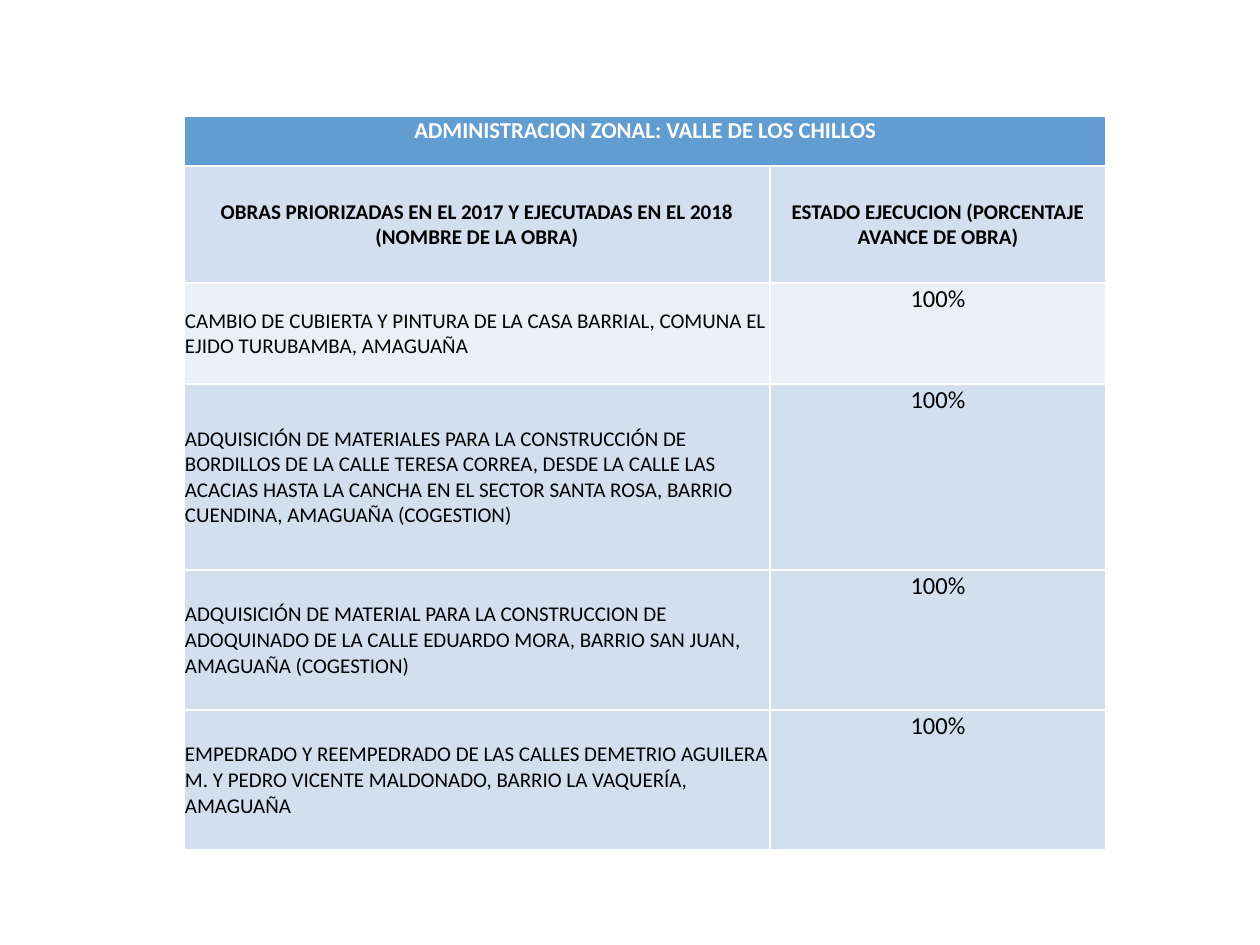
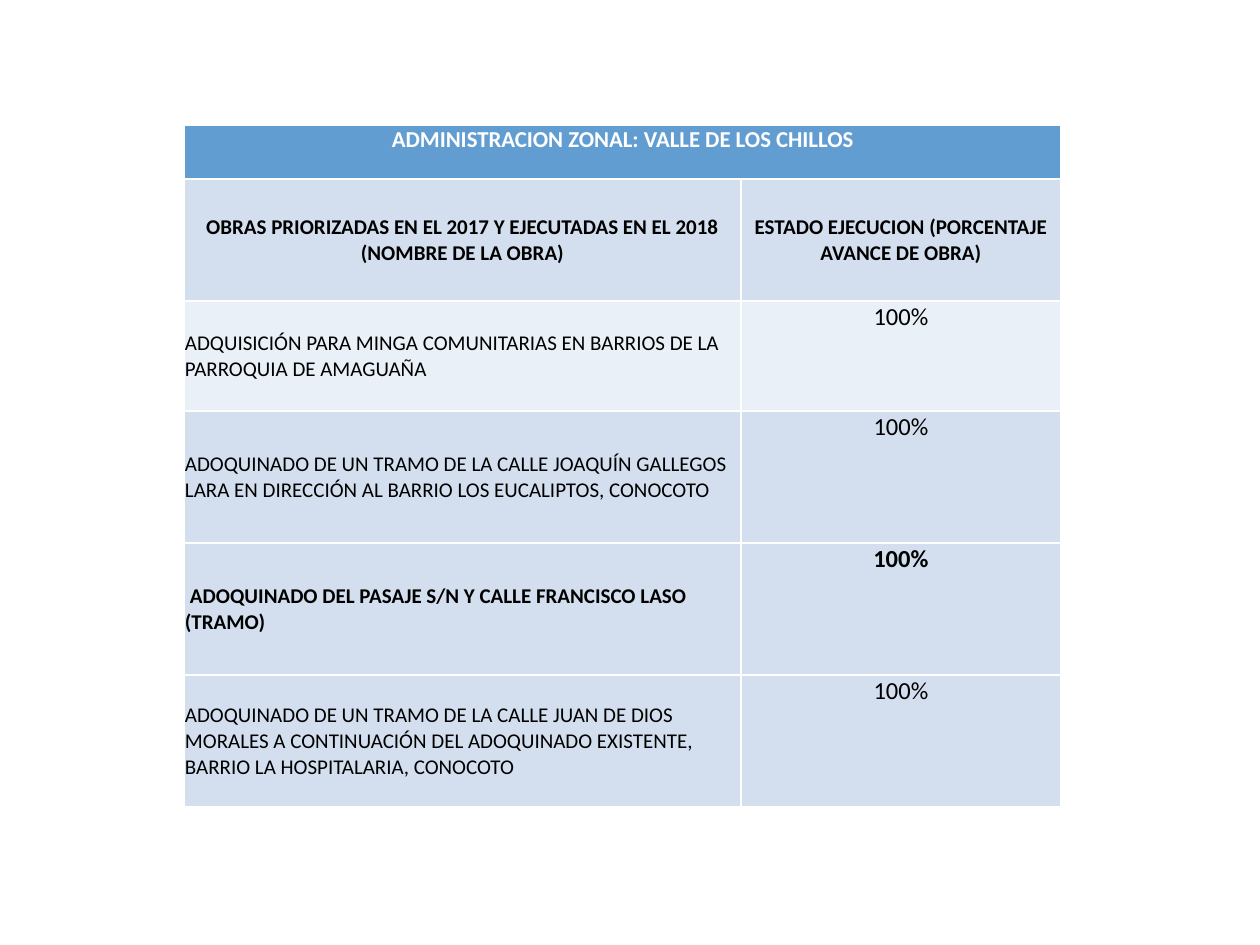
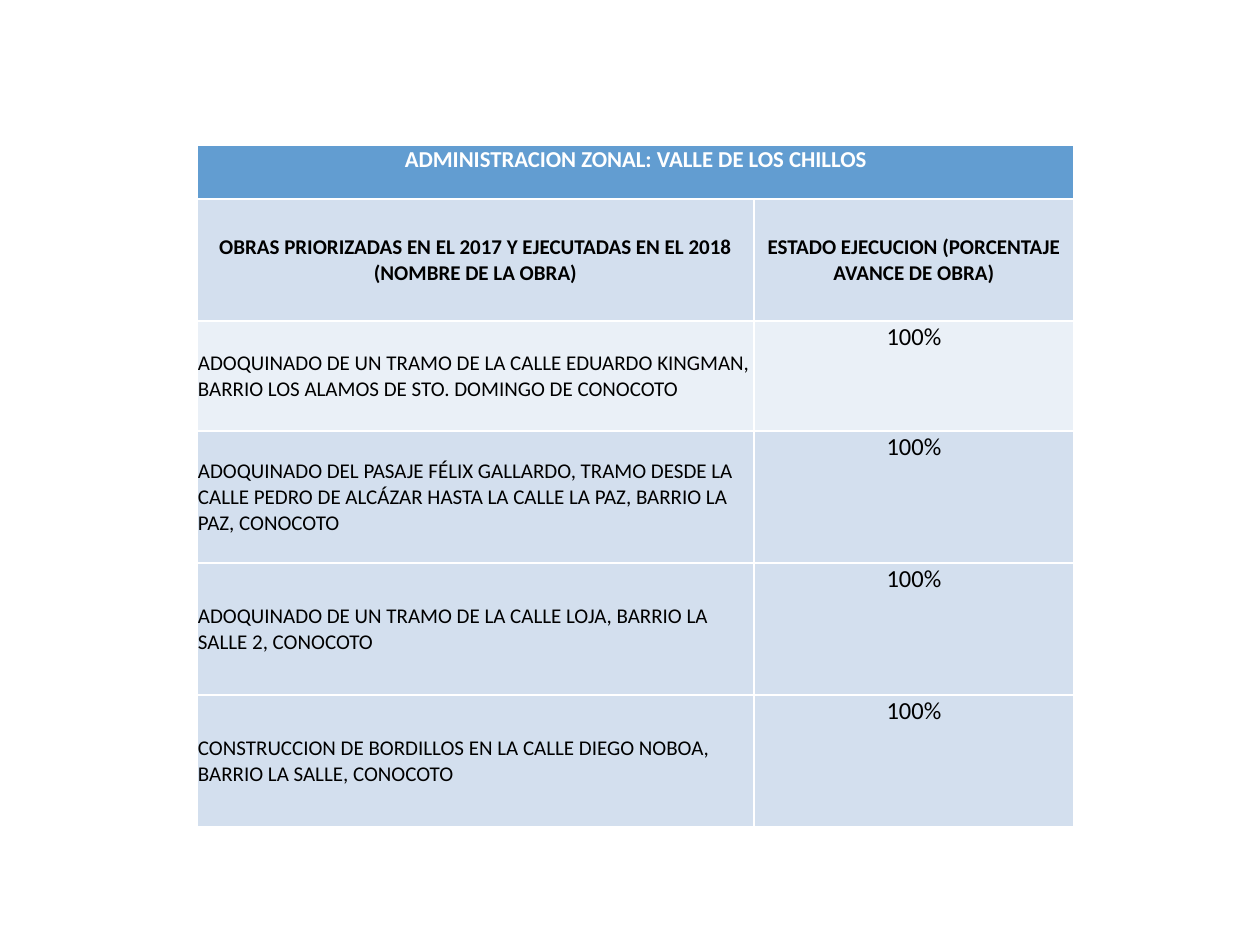
from dataclasses import dataclass

from lxml import etree
from pptx import Presentation
from pptx import util as u
from pptx.dml.color import RGBColor
from pptx.enum import text
from pptx.oxml.ns import qn

# Content: works of each slide as (name, progress, bold)
TITLE = "ADMINISTRACION ZONAL: VALLE DE LOS CHILLOS"
HEADINGS = (
    "OBRAS PRIORIZADAS EN EL 2017 Y EJECUTADAS EN EL 2018 (NOMBRE DE LA OBRA)",
    "ESTADO EJECUCION (PORCENTAJE AVANCE DE OBRA)",
)
AMAGUANA_WORKS = [
    ("CAMBIO DE CUBIERTA Y PINTURA DE LA CASA BARRIAL, COMUNA EL EJIDO TURUBAMBA, "
     "AMAGUAÑA", "100%", False),
    ("ADQUISICIÓN DE MATERIALES PARA LA CONSTRUCCIÓN DE BORDILLOS DE LA CALLE TERESA "
     "CORREA, DESDE LA CALLE LAS ACACIAS HASTA LA CANCHA EN EL SECTOR SANTA ROSA, "
     "BARRIO CUENDINA, AMAGUAÑA (COGESTION)", "100%", False),
    ("ADQUISICIÓN DE MATERIAL PARA LA CONSTRUCCION DE ADOQUINADO DE LA CALLE EDUARDO "
     "MORA, BARRIO SAN JUAN, AMAGUAÑA (COGESTION)", "100%", False),
    ("EMPEDRADO Y REEMPEDRADO DE LAS CALLES DEMETRIO AGUILERA M. Y PEDRO VICENTE "
     "MALDONADO, BARRIO LA VAQUERÍA, AMAGUAÑA", "100%", False),
]
MIXED_WORKS = [
    ("ADQUISICIÓN PARA MINGA COMUNITARIAS EN BARRIOS DE LA PARROQUIA DE AMAGUAÑA",
     "100%", False),
    ("ADOQUINADO DE UN TRAMO DE LA CALLE JOAQUÍN GALLEGOS LARA EN DIRECCIÓN AL BARRIO "
     "LOS EUCALIPTOS, CONOCOTO", "100%", False),
    ("ADOQUINADO DEL PASAJE S/N Y CALLE FRANCISCO LASO (TRAMO)", "100%", True),
    ("ADOQUINADO DE UN TRAMO DE LA CALLE JUAN DE DIOS MORALES A CONTINUACIÓN DEL "
     "ADOQUINADO EXISTENTE, BARRIO LA HOSPITALARIA, CONOCOTO", "100%", False),
]
CONOCOTO_WORKS = [
    ("ADOQUINADO DE UN TRAMO DE LA CALLE EDUARDO KINGMAN, BARRIO LOS ALAMOS DE STO. "
     "DOMINGO DE CONOCOTO", "100%", False),
    ("ADOQUINADO DEL PASAJE FÉLIX GALLARDO, TRAMO DESDE LA CALLE PEDRO DE ALCÁZAR "
     "HASTA LA CALLE LA PAZ, BARRIO LA PAZ, CONOCOTO", "100%", False),
    ("ADOQUINADO DE UN TRAMO DE LA CALLE LOJA, BARRIO LA SALLE 2, CONOCOTO",
     "100%", False),
    ("CONSTRUCCION DE BORDILLOS EN LA CALLE DIEGO NOBOA, BARRIO LA SALLE, CONOCOTO",
     "100%", False),
]

# Layout in px: column widths, row heights, then left and top of each table
WIDE = ((586, 336), (50, 117, 101, 186, 140, 140))
COMPACT = ((557, 320), (54, 122, 110, 132, 132, 132))
SLIDES = [
    (AMAGUANA_WORKS, WIDE, (184, 116)),
    (MIXED_WORKS, COMPACT, (184, 125)),
    (CONOCOTO_WORKS, COMPACT, (197, 145)),
]
BOLD_INDENT = 5


@dataclass(frozen=True)
class Theme:
    font: str = "Calibri"
    title_fill: str = "629DD1"
    band: str = "D3DFEE"
    light_band: str = "EAF0F7"
    white: str = "FFFFFF"
    black: str = "000000"
    title_size: int = 13
    text_size: int = 12
    progress_size: int = 14
    rule: float = 1
    title_rule: float = 1.5


THEME = Theme()


def px(n):
    return u.Emu(n * u.Inches(1) // 126)


def set_borders(cell, top, bottom):
    tc_pr = cell._tc.get_or_add_tcPr()
    for side, width in zip("LRTB", (THEME.rule, THEME.rule, top, bottom)):
        ln = etree.SubElement(tc_pr, qn(f"a:ln{side}"), w=str(u.Pt(width)))
        fill = etree.SubElement(ln, qn("a:solidFill"))
        etree.SubElement(fill, qn("a:srgbClr"), val=THEME.white)


def style_cell(cell, row):
    set_borders(cell, THEME.title_rule if row == 1 else THEME.rule,
                THEME.title_rule if row == 0 else THEME.rule)
    fill = {0: THEME.title_fill, 2: THEME.light_band}.get(row, THEME.band)
    cell.fill.solid()
    cell.fill.fore_color.rgb = RGBColor.from_string(fill)
    cell.margin_left = cell.margin_right = cell.margin_top = px(1)
    cell.margin_bottom = 0


def write(cell, words, size, bold=False, color=THEME.black, centred=True, middle=True):
    cell.text_frame.text = words
    cell.vertical_anchor = text.MSO_ANCHOR.MIDDLE if middle else text.MSO_ANCHOR.TOP
    p = cell.text_frame.paragraphs[0]
    p.alignment = text.PP_ALIGN.CENTER if centred else text.PP_ALIGN.LEFT
    font = p.runs[0].font
    font.name, font.size, font.bold = THEME.font, u.Pt(size), bold
    font.color.rgb = RGBColor.from_string(color)
    return p


def add_works_table(slide, works, widths, heights, left, top):
    table = slide.shapes.add_table(len(heights), len(widths), px(left), px(top),
                                   px(sum(widths)), px(sum(heights))).table
    table.first_row = table.horz_banding = False
    for column, width in zip(table.columns, widths):
        column.width = px(width)
    for i, (row, height) in enumerate(zip(table.rows, heights)):
        row.height = px(height)
        for cell in row.cells:
            style_cell(cell, i)

    # Title row and headings
    table.cell(0, 0).merge(table.cell(0, 1))
    write(table.cell(0, 0), TITLE, THEME.title_size, True, THEME.white, middle=False)
    for col, heading in enumerate(HEADINGS):
        write(table.cell(1, col), heading, THEME.text_size, True)

    # Works and their progress
    for i, (name, progress, bold) in enumerate(works, start=2):
        p = write(table.cell(i, 0), name, THEME.text_size, bold, centred=False)
        if bold:
            p._p.get_or_add_pPr().set("indent", str(px(BOLD_INDENT)))
        write(table.cell(i, 1), progress, THEME.progress_size, bold, middle=False)


def main():
    prs = Presentation()
    prs.slide_width, prs.slide_height = px(1260), px(945)
    for works, (widths, heights), (left, top) in SLIDES:
        slide = prs.slides.add_slide(prs.slide_layouts[6])
        add_works_table(slide, works, widths, heights, left, top)
    prs.save("out.pptx")


if __name__ == "__main__":
    main()
